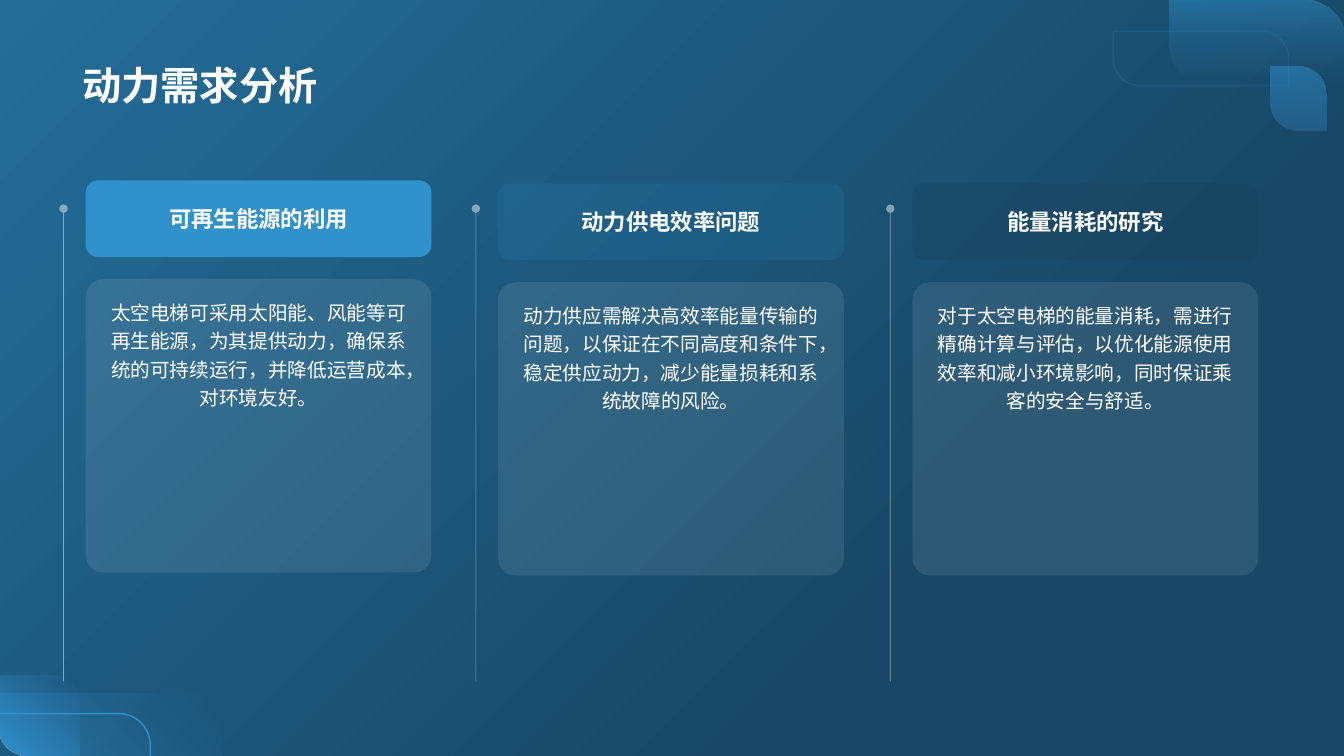
"""Build the slide on power demand: a title and three topic columns."""
from dataclasses import dataclass
from math import cos, pi, sin
from typing import Optional

from lxml import etree
from pptx import Presentation
from pptx.dml.color import RGBColor
from pptx.enum.shapes import MSO_CONNECTOR, MSO_SHAPE
from pptx.enum.text import MSO_ANCHOR, PP_ALIGN
from pptx.oxml.ns import qn
from pptx.util import Inches, Pt

STRAIGHT = MSO_CONNECTOR.STRAIGHT
ROUNDED = MSO_SHAPE.ROUNDED_RECTANGLE
DIAGONAL = MSO_SHAPE.ROUND_2_DIAG_RECTANGLE
LEFT, CENTER = PP_ALIGN.LEFT, PP_ALIGN.CENTER
TOP, MIDDLE, BOTTOM = MSO_ANCHOR.TOP, MSO_ANCHOR.MIDDLE, MSO_ANCHOR.BOTTOM

FONT = "Noto Sans CJK SC"
COLORS = {
    "sky": "246D99",
    "deep": "184866",
    "steel": "2F72A7",
    "bright": "3091CC",
    "night": "1A3444",
    "pale": "F0F0F0",
    "white": "FFFFFF",
}
BOX_WIDTH = 3.43
HEADING_HEIGHT = 0.76
CARD_HEIGHT = 2.91
CARD_DROP = 0.98
RAIL_GAP = 0.22
RAIL_TOP, RAIL_BOTTOM = 2.07, 6.76


@dataclass
class Petal:
    """A decorative leaf; without an angle it is only an outline."""
    left: float
    top: float
    width: float
    height: float
    rounding: float
    angle: Optional[int] = None
    opacities: tuple[int, ...] = (0, 50)


@dataclass
class Topic:
    """A column with a rail, a heading and a text card."""
    left: float
    top: float
    color: str
    opacity: int
    heading: str
    body: str


CORNER_PETALS = [
    Petal(-0.01, 6.7, 0.8, 0.8, 0.357, 225, (0, 100)),
    Petal(-0.01, 6.88, 2.21, 0.62, 0.5, 225),
    Petal(11.6, 0, 1.74, 0.85, 0.5, 90),
    Petal(11.04, 0.31, 1.74, 0.54, 0.5, None, (30,)),
    Petal(12.6, 0.66, 0.56, 0.64, 0.5, 90, (50, 50)),
]
TOPICS = [
    Topic(0.85, 1.79, "bright", 100, "可再生能源的利用",
          "太空电梯可采用太阳能、风能等可再生能源，为其提供动力，确保系统的可持续运行，并降低运营成本，对环境友好。"),
    Topic(4.94, 1.82, "bright", 15, "动力供电效率问题",
          "动力供应需解决高效率能量传输的问题，以保证在不同高度和条件下，稳定供应动力，减少能量损耗和系统故障的风险。"),
    Topic(9.05, 1.82, "night", 15, "能量消耗的研究",
          "对于太空电梯的能量消耗，需进行精确计算与评估，以优化能源使用效率和减小环境影响，同时保证乘客的安全与舒适。"),
]


def rgb(name: str) -> RGBColor:
    """Return a named colour."""
    return RGBColor.from_string(COLORS[name])


def set_opacity(shape, *percents: int) -> None:
    """Give the shape's colours, in order, their opacities."""
    colors = list(shape._element.spPr.iter(qn("a:srgbClr")))
    for color, percent in zip(colors, percents):
        if percent < 100:
            etree.SubElement(color, qn("a:alpha"), val=str(percent * 1000))


def set_gradient(fill, start: str, end: str, angle: int, reach: float = 1.0) -> None:
    """Fill with a two-colour linear gradient."""
    fill.gradient()
    fill.gradient_angle = angle
    for stop, name, position in zip(fill.gradient_stops, (start, end), (0.0, reach)):
        stop.color.rgb = rgb(name)
        stop.position = position


def write_text(frame, text: str, size: int, bold: bool, align, anchor, spacing: float = 1.0) -> None:
    """Write one white paragraph into a text frame."""
    frame.word_wrap = True
    frame.vertical_anchor = anchor
    para = frame.paragraphs[0]
    para.text = text
    para.alignment = align
    para.line_spacing = spacing
    font = para.font
    font.name, font.size, font.bold = FONT, Pt(size), bold
    font.color.rgb = rgb("white")
    properties = para._p.get_or_add_pPr().get_or_add_defRPr()
    etree.SubElement(properties, qn("a:ea"), typeface=FONT)


def add_petal(page, petal: Petal) -> None:
    """Draw a leaf with two rounded corners."""
    leaf = page.shapes.add_shape(DIAGONAL, Inches(petal.left), Inches(petal.top),
                                 Inches(petal.width), Inches(petal.height))
    leaf.shadow.inherit = False
    leaf.adjustments[0] = 0
    leaf.adjustments[1] = petal.rounding
    if petal.angle is None:
        leaf.fill.background()
        leaf.line.color.rgb = rgb("steel")
        leaf.line.width = Pt(1)
    else:
        set_gradient(leaf.fill, "steel", "bright", petal.angle)
        leaf.line.fill.background()
    set_opacity(leaf, *petal.opacities)


def add_corner_curve(page) -> None:
    """Draw the open outline in the lower left corner."""
    center_x, center_y, radius, steps = 1.18, 7.39, 0.31, 24
    angles = [pi / 2 * step / steps for step in range(steps + 1)]
    arc = [(center_x + radius * sin(a), center_y - radius * cos(a)) for a in angles]
    points = [(Inches(x), Inches(y)) for x, y in arc + [(center_x + radius, 7.5)]]
    builder = page.shapes.build_freeform(Inches(-0.01), Inches(center_y - radius))
    builder.add_line_segments(points, close=False)
    curve = builder.convert_to_shape()
    curve.shadow.inherit = False
    curve.fill.background()
    curve.line.color.rgb = rgb("bright")
    curve.line.width = Pt(1)


def add_rail(page, x: float) -> None:
    """Draw a thin vertical line with a dot on top."""
    rail = page.shapes.add_connector(STRAIGHT, Inches(x), Inches(RAIL_TOP),
                                     Inches(x), Inches(RAIL_BOTTOM))
    rail.line.color.rgb = rgb("pale")
    rail.line.width = Pt(0.5)
    set_opacity(rail, 50)
    properties = rail._element.spPr
    etree.SubElement(properties.find(qn("a:ln")), qn("a:headEnd"), type="oval")
    etree.SubElement(properties, qn("a:effectLst"))


def add_box(page, left: float, top: float, height: float, rounding: float, color: str, opacity: int):
    """Draw a rounded box and return its text frame."""
    box = page.shapes.add_shape(ROUNDED, Inches(left), Inches(top),
                                Inches(BOX_WIDTH), Inches(height))
    box.shadow.inherit = False
    box.adjustments[0] = rounding
    box.fill.solid()
    box.fill.fore_color.rgb = rgb(color)
    box.line.fill.background()
    set_opacity(box, opacity)
    frame = box.text_frame
    frame.margin_left = frame.margin_right = Inches(0.12)
    frame.margin_top = frame.margin_bottom = Inches(0.12)
    return frame


def add_topic(page, topic: Topic) -> None:
    """Draw one topic column."""
    add_rail(page, topic.left - RAIL_GAP)
    card = add_box(page, topic.left, topic.top + CARD_DROP, CARD_HEIGHT, 0.06, "pale", 10)
    write_text(card, topic.body, 14, False, CENTER, TOP, 1.2)
    heading = add_box(page, topic.left, topic.top, HEADING_HEIGHT, 0.16, topic.color, topic.opacity)
    write_text(heading, topic.heading, 16, True, CENTER, MIDDLE)


def main() -> None:
    """Build and save the deck."""
    deck = Presentation()
    deck.slide_width, deck.slide_height = Inches(13.33), Inches(7.5)
    page = deck.slides.add_slide(deck.slide_layouts[6])
    set_gradient(page.background.fill, "sky", "deep", 315, 0.72)
    for petal in CORNER_PETALS:
        add_petal(page, petal)
    add_corner_curve(page)
    title = page.shapes.add_textbox(Inches(0.72), Inches(0.14), Inches(11.88), Inches(0.98))
    write_text(title.text_frame, "动力需求分析", 28, True, LEFT, BOTTOM)
    for topic in TOPICS:
        add_topic(page, topic)
    deck.save("out.pptx")


if __name__ == "__main__":
    main()
